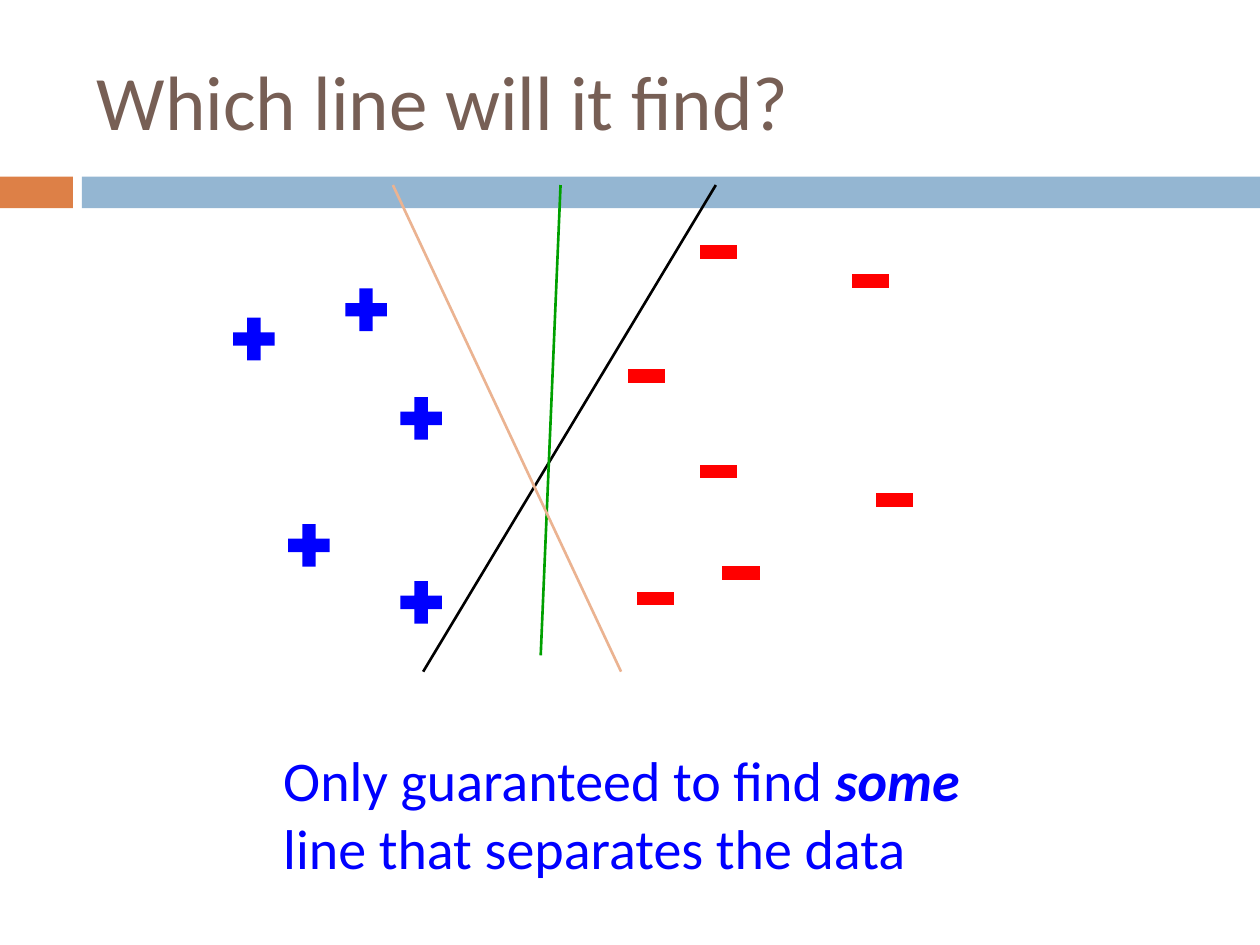
from lxml import etree
from pptx import Presentation
from pptx.dml.color import RGBColor
from pptx.enum.shapes import MSO_CONNECTOR, MSO_SHAPE
from pptx.enum.text import MSO_ANCHOR, MSO_AUTO_SIZE, PP_ALIGN
from pptx.oxml.ns import qn
from pptx.util import Cm, Pt

RECTANGLE = MSO_SHAPE.RECTANGLE
PLUS = MSO_SHAPE.MATH_PLUS
MINUS = MSO_SHAPE.MATH_MINUS
STRAIGHT = MSO_CONNECTOR.STRAIGHT
LEFT = PP_ALIGN.LEFT
MIDDLE = MSO_ANCHOR.MIDDLE
TOP = MSO_ANCHOR.TOP
NO_FIT = MSO_AUTO_SIZE.NONE
GROW = MSO_AUTO_SIZE.SHAPE_TO_FIT_TEXT

COLOURS = {
    "title": "775F55",
    "accent": "DD8047",
    "band": "94B6D2",
    "positive": "0000FF",
    "negative": "FF0000",
    "black": "000000",
    "green": "00A000",
    "peach": "EBB391",
}

# Marker positions and separating lines, in centimetres
PLUS_SIZE = (1.14, 1.17)
MINUS_SIZE = (1.02, 1.17)
POSITIVES = [(6.81, 5.66), (7.92, 7.85), (7.92, 11.56), (4.55, 6.25), (5.66, 10.41)]
NEGATIVES = [(13.97, 4.5), (17.53, 9.5), (17.04, 5.08), (13.97, 8.92),
             (14.43, 10.97), (12.52, 6.99), (12.7, 11.48)]
LINE_TOP = 3.73
SEPARATORS = [("black", (8.53, 13.54), 14.43),
              ("green", (10.9, 13.21), 11.3),
              ("peach", (12.52, 13.54), 7.92)]


class SlideBuilder:
    """Holds the style and the current slide."""

    font_name = "Calibri"

    def __init__(self, slide):
        self.slide = slide

    def colour(self, name):
        return RGBColor.from_string(COLOURS[name])

    def set_attributes(self, target, values):
        for name, value in values.items():
            setattr(target, name, value)

    def fill_text(self, shape, runs, size, colour, frame_format):
        self.set_attributes(shape.text_frame, {"word_wrap": True, **frame_format})
        paragraph = shape.text_frame.paragraphs[0]
        paragraph.alignment = LEFT
        for text, emphasis in runs:
            run = paragraph.add_run()
            run.text = text
            self.set_attributes(run.font, {
                "name": self.font_name, "size": Pt(size),
                "bold": emphasis, "italic": emphasis})
            run.font.color.rgb = self.colour(colour)

    def title(self, text, box):
        shape = self.slide.shapes.title
        names = ("left", "top", "width", "height")
        self.set_attributes(shape, dict(zip(names, map(Cm, box))))
        self.fill_text(shape, [(text, False)], 44, "title",
                       {"vertical_anchor": MIDDLE, "auto_size": NO_FIT})

    def text(self, runs, box):
        shape = self.slide.shapes.add_textbox(*map(Cm, box))
        self.fill_text(shape, runs, 32, "positive",
                       {"vertical_anchor": TOP, "auto_size": GROW})

    def shape(self, kind, box, colour):
        shape = self.slide.shapes.add_shape(kind, *map(Cm, box))
        shape.shadow.inherit = False
        shape.fill.solid()
        shape.fill.fore_color.rgb = self.colour(colour)
        shape.line.fill.background()

    def line(self, start, end, colour):
        connector = self.slide.shapes.add_connector(STRAIGHT, *map(Cm, start + end))
        connector.line.width = Pt(1.5)
        connector.line.color.rgb = self.colour(colour)
        properties = connector._element.find(qn("p:spPr"))
        etree.SubElement(properties, qn("a:effectLst"))


def main():
    presentation = Presentation()
    presentation.slide_width = Cm(25.4)
    presentation.slide_height = Cm(19.05)
    title_only = presentation.slide_layouts[5]
    builder = SlideBuilder(presentation.slides.add_slide(title_only))

    # Title and band
    builder.title("Which line will it find?", (1.7, 0.64, 22.66, 2.74))
    builder.shape(RECTANGLE, (0, 3.56, 1.47, 0.64), "accent")
    builder.shape(RECTANGLE, (1.65, 3.56, 23.75, 0.64), "band")

    # Data points
    for position in POSITIVES:
        builder.shape(PLUS, position + PLUS_SIZE, "positive")
    for position in NEGATIVES:
        builder.shape(MINUS, position + MINUS_SIZE, "negative")

    # Candidate separating lines
    for colour, start, end_x in SEPARATORS:
        builder.line(start, (end_x, LINE_TOP), colour)

    # Conclusion
    builder.text([("Only guaranteed to find ", False), ("some", True),
                  (" line that separates the data", False)],
                 (5.46, 14.91, 14.5, 3))

    presentation.save("out.pptx")


if __name__ == "__main__":
    main()
